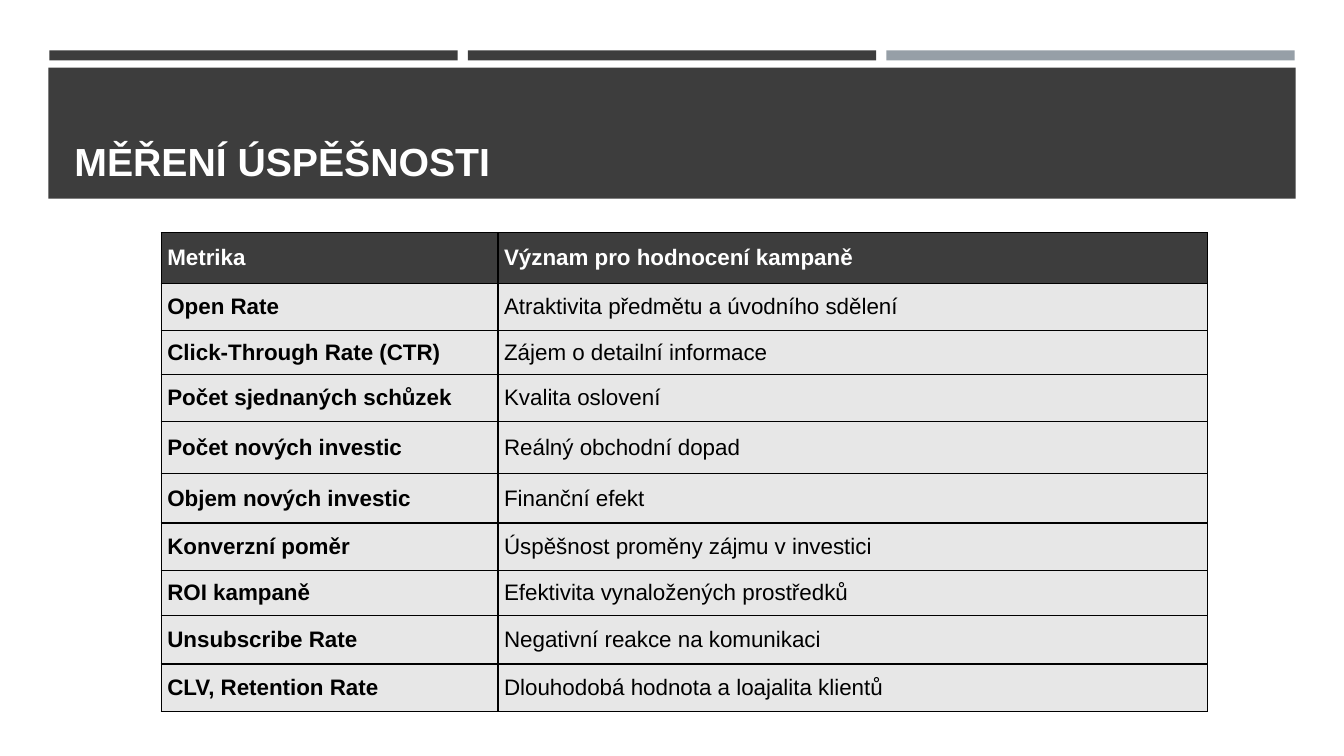
import pptx
import pptx.dml.color
import pptx.enum.shapes
import pptx.enum.text
import pptx.oxml
import pptx.oxml.ns
import pptx.util
from pptx.util import Inches

COLORS = {
    "dark": "3D3D3D",
    "steel": "969FA7",
    "row": "E7E7E7",
    "white": "FFFFFF",
    "black": "000000",
}

METRICS = [
    ("Metrika", "Význam pro hodnocení kampaně"),
    ("Open Rate", "Atraktivita předmětu a úvodního sdělení"),
    ("Click-Through Rate (CTR)", "Zájem o detailní informace"),
    ("Počet sjednaných schůzek", "Kvalita oslovení"),
    ("Počet nových investic", "Reálný obchodní dopad"),
    ("Objem nových investic", "Finanční efekt"),
    ("Konverzní poměr", "Úspěšnost proměny zájmu v investici"),
    ("ROI kampaně", "Efektivita vynaložených prostředků"),
    ("Unsubscribe Rate", "Negativní reakce na komunikaci"),
    ("CLV, Retention Rate", "Dlouhodobá hodnota a loajalita klientů"),
]
COLUMN_WIDTHS = [3.34, 7.04]
ROW_HEIGHTS = [0.5, 0.47, 0.44, 0.46, 0.52, 0.49, 0.47, 0.45, 0.48, 0.47]


class SlideBuilder:
    """Holds the style and the current slide, and adds elements to it."""

    def __init__(self, slide, font="Arial"):
        self.slide = slide
        self.font = font

    def color(self, name):
        return pptx.dml.color.RGBColor.from_string(COLORS[name])

    def style(self, frame, size, color, bold):
        for para in frame.paragraphs:
            for span in para.runs:
                span.font.name = self.font
                span.font.size = pptx.util.Pt(size)
                span.font.bold = bold
                span.font.color.rgb = self.color(color)

    def bar(self, left, top, width, height, color):
        shape = self.slide.shapes.add_shape(
            pptx.enum.shapes.MSO_SHAPE.RECTANGLE,
            Inches(left), Inches(top), Inches(width), Inches(height))
        shape.shadow.inherit = False
        shape.fill.solid()
        shape.fill.fore_color.rgb = self.color(color)
        shape.line.fill.background()

    def title(self, text, left, top, width, height):
        box = self.slide.shapes.add_textbox(
            Inches(left), Inches(top), Inches(width), Inches(height))
        frame = box.text_frame
        frame.word_wrap = True
        frame.vertical_anchor = pptx.enum.text.MSO_ANCHOR.BOTTOM
        frame.text = text
        self.style(frame, 28, "white", True)

    def borders(self, cell):
        properties = cell._tc.get_or_add_tcPr()
        for side in ("lnL", "lnR", "lnT", "lnB"):
            properties.append(pptx.oxml.parse_xml(
                f'<a:{side} {pptx.oxml.ns.nsdecls("a")} w="12700"><a:solidFill>'
                f'<a:srgbClr val="{COLORS["black"]}"/></a:solidFill></a:{side}>'))

    def cell(self, cell, text, header, bold):
        self.borders(cell)
        cell.fill.solid()
        cell.fill.fore_color.rgb = self.color("dark" if header else "row")
        cell.vertical_anchor = pptx.enum.text.MSO_ANCHOR.MIDDLE
        cell.margin_left = cell.margin_right = Inches(0.06)
        cell.margin_top = cell.margin_bottom = Inches(0.06 if header else 0.03)
        cell.text_frame.text = text
        self.style(cell.text_frame, 16, "white" if header else "black", bold)

    def table(self, rows, left, top, widths, heights):
        table = self.slide.shapes.add_table(
            len(rows), len(widths), Inches(left), Inches(top),
            Inches(sum(widths)), Inches(sum(heights))).table
        for column, width in zip(table.columns, widths):
            column.width = Inches(width)
        for row, height in zip(table.rows, heights):
            row.height = Inches(height)
        for row_index, texts in enumerate(rows):
            for column_index, text in enumerate(texts):
                header = row_index == 0
                self.cell(table.cell(row_index, column_index), text,
                          header, header or column_index == 0)


def main():
    deck = pptx.Presentation()
    deck.slide_width = Inches(13.33)
    deck.slide_height = Inches(7.5)
    page = SlideBuilder(deck.slides.add_slide(deck.slide_layouts[6]))
    for index, color in enumerate(("dark", "dark", "steel")):
        page.bar(0.49 + 4.15 * index, 0.5, 4.05, 0.1, color)
    page.bar(0.48, 0.67, 12.37, 1.3, "dark")
    page.title("MĚŘENÍ ÚSPĚŠNOSTI", 0.64, 0.77, 12.06, 1.11)
    page.table(METRICS, 1.6, 2.31, COLUMN_WIDTHS, ROW_HEIGHTS)
    deck.save("out.pptx")


if __name__ == "__main__":
    main()
